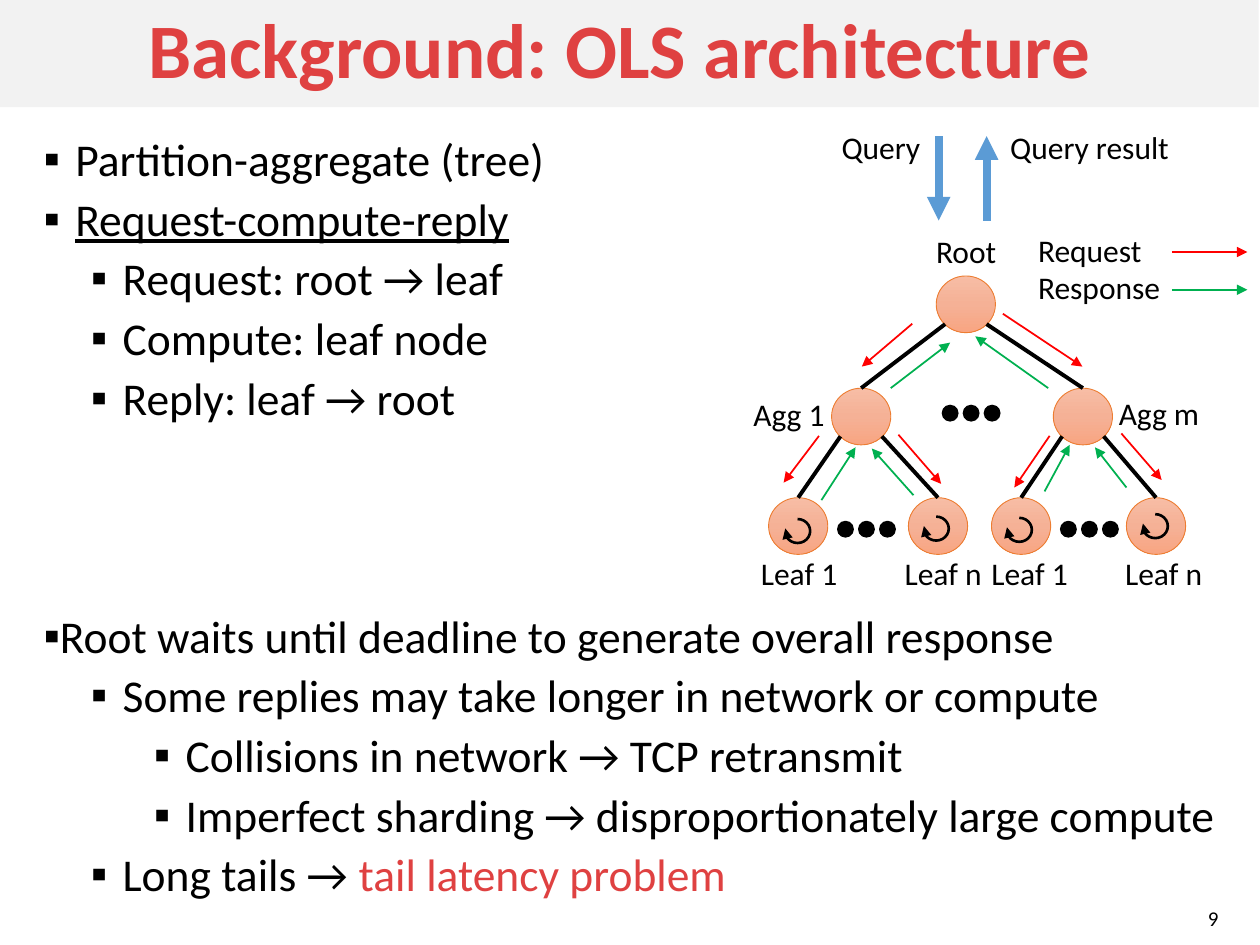
from copy import deepcopy
from lxml.etree import SubElement
from pptx import Presentation
from pptx.dml.color import RGBColor
from pptx.enum.shapes import MSO_CONNECTOR as Connector, MSO_SHAPE as Preset
from pptx.enum.text import MSO_ANCHOR as Anchor, PP_ALIGN as Align
from pptx.oxml.ns import qn
from pptx.util import Pt

paint = RGBColor.from_string
BLACK, CORAL, RED, GREEN, BLUE = "000000", "DF4141", "FF0000", "00B050", "5B9BD5"


def write(para, text, size, color=BLACK):
    span = para.add_run()
    span.text = text
    span.font.name = "Calibri"
    span.font.size = Pt(size)
    span.font.color.rgb = paint(color)
    return span


def draw_line(start, end, color, width, arrow=True):
    line = page.shapes.add_connector(Connector.STRAIGHT, *map(Pt, start + end))
    line.line.color.rgb = paint(color)
    line.line.width = Pt(width)
    properties = line._element.spPr
    SubElement(properties, qn("a:effectLst"))
    if arrow:
        SubElement(properties.find(qn("a:ln")), qn("a:tailEnd"), type="triangle")
    return line


deck = Presentation()
deck.slide_width, deck.slide_height = Pt(720), Pt(540)
page = deck.slides.add_slide(deck.slide_layouts[6])

title = page.shapes.add_shape(Preset.RECTANGLE, Pt(-0.72), Pt(0), Pt(720), Pt(61.2))
title.shadow.inherit = False
title.fill.solid()
title.fill.fore_color.rgb = paint("F2F2F2")
title.line.fill.background()
title.text_frame.word_wrap = True
title.text_frame.vertical_anchor = Anchor.MIDDLE
para = title.text_frame.paragraphs[0]
para.alignment = Align.CENTER
para.line_spacing = 0.9
write(para, "Background: OLS architecture ", 44, CORAL).font.bold = True

bullets = [
    (0, 18, 6, "Partition-aggregate (tree)", ""),
    (0, 18, 6, "Request-compute-reply", ""),
    (1, 45, 6, "Request: root → leaf", ""),
    (1, 45, 6, "Compute: leaf node", ""),
    (1, 45, 6, "Reply: leaf → root", ""),
    (0, 9, 108, "Root waits until deadline to generate overall response", ""),
    (1, 45, 6, "Some replies may take longer in network or compute", ""),
    (2, 81, 6, "Collisions in network → TCP retransmit", ""),
    (2, 81, 6, "Imperfect sharding → disproportionately large compute", ""),
    (1, 45, 6, "Long tails → ", "tail latency problem"),
]
body = page.shapes.add_textbox(Pt(18), Pt(74.88), Pt(695.5), Pt(437.8)).text_frame
body.word_wrap = True
for index, (level, margin, gap, text, accent) in enumerate(bullets):
    para = body.add_paragraph() if index else body.paragraphs[0]
    para.level = level
    para.line_spacing = 0.9
    para.space_before = Pt(gap)
    span = write(para, text, 26)
    span.font.underline = text == "Request-compute-reply"
    if accent:
        write(para, accent, 26, CORAL)
    properties = para._p.get_or_add_pPr()
    properties.set("marL", str(Pt(margin)))
    properties.set("indent", str(Pt(-18)))
    SubElement(properties, qn("a:buFont"), typeface="Calibri")
    SubElement(properties, qn("a:buChar"), char="▪")

node_width, node_height = 33.84, 32.4
node_places = {
    "root": (535, 157.7),
    "agg 1": (475.2, 221.8),
    "agg m": (601.9, 221.8),
    "agg 1 leaf 1": (439.2, 284.4),
    "agg 1 leaf n": (519.1, 284.4),
    "agg m leaf 1": (566.6, 284.4),
    "agg m leaf n": (643.7, 284.4),
}
nodes = {}
for name, (left, top) in node_places.items():
    node = page.shapes.add_shape(Preset.OVAL, Pt(left), Pt(top), Pt(node_width), Pt(node_height))
    node.shadow.inherit = False
    node.fill.gradient()
    stops = node._element.spPr.find(qn("a:gradFill")).find(qn("a:gsLst"))
    stops.append(deepcopy(stops[0]))
    for stop, position, color in zip(node.fill.gradient_stops, (0, 0.5, 1), ("F7BDA5", "F5B196", "F8A582")):
        stop.position = position
        stop.color.rgb = paint(color)
    node.fill.gradient_angle = 270
    node.line.color.rgb = paint("ED7D31")
    node.line.width = Pt(0.5)
    nodes[name] = node

branches = [("root", "agg 1", "agg m"),
            ("agg 1", "agg 1 leaf 1", "agg 1 leaf n"),
            ("agg m", "agg m leaf 1", "agg m leaf n")]
for parent, *children in branches:
    left, top = node_places[parent]
    for child, side in zip(children, (0.15, 0.85)):
        start = (left + side * node_width, top + 0.85 * node_height)
        edge = draw_line(start, node_places[child], BLACK, 2.25, arrow=False)
        edge.end_connect(nodes[child], 0)

requests = [
    ((521.3, 185), (492.5, 209.5)), ((573.1, 179.3), (618.5, 209.5)),
    ((468, 249.1), (447.8, 275.8)), ((513.4, 248.4), (537.8, 276.5)),
    ((599.8, 249.1), (579.6, 278.6)), ((640.8, 247.7), (663.8, 274.3)),
    ((669.6, 144), (712.8, 144)),
]
responses = [
    ((509, 221.8), (542.9, 195.8)), ((599, 221.8), (557.3, 192.2)),
    ((469.4, 285.8), (488.9, 255.6)), ((522, 283), (498.2, 256.3)),
    ((596.9, 280.8), (611.3, 254.2)), ((643.7, 278.6), (625.7, 255.6)),
    ((669.6, 165.6), (712.8, 165.6)),
]
queries = [((536.4, 77.8), (536.4, 126)), ((563.8, 126), (563.8, 77.8))]
for arrows, color, width in ((requests, RED, 1), (responses, GREEN, 1), (queries, BLUE, 4.5)):
    for start, end in arrows:
        draw_line(start, end, color, width)

for left, top in ((538.6, 231.8), (478.8, 298.1), (606.2, 298.1)):
    for step in range(3):
        dot = page.shapes.add_shape(Preset.OVAL, Pt(left + 12 * step), Pt(top), Pt(8.64), Pt(8.64))
        dot.shadow.inherit = False
        dot.fill.solid()
        dot.fill.fore_color.rgb = paint(BLACK)
        dot.line.color.rgb = paint(BLACK)
        dot.line.width = Pt(1)

for left, top in ((448.6, 296.6), (527.8, 295.2), (575.3, 295.9), (653, 293.8)):
    loop = page.shapes.add_shape(Preset.ARC, Pt(left), Pt(top), Pt(14.4), Pt(13.7))
    loop.shadow.inherit = False
    loop.adjustments[0], loop.adjustments[1] = 162, 115
    loop.fill.background()
    loop.line.color.rgb = paint(BLACK)
    loop.line.width = Pt(1.5)
    SubElement(loop._element.spPr.find(qn("a:ln")), qn("a:tailEnd"), type="triangle")

labels = [
    (427.7, 313.2, 59, ["Leaf 1"]), (509.8, 313.2, 59, ["Leaf n"]),
    (559.4, 313.2, 59, ["Leaf 1"]), (635.8, 313.2, 59, ["Leaf n"]),
    (423.4, 222.1, 56, ["Agg 1"]), (632.2, 221.8, 61.2, ["Agg m"]),
    (527.8, 128.9, 50, ["Root"]), (586.1, 128.2, 86.4, ["Request", "Response"]),
    (473.8, 69.8, 64.8, ["Query"]), (570.2, 69.8, 119.5, ["Query result"]),
]
for left, top, width, lines in labels:
    height = 6.8 + 22 * len(lines)
    label = page.shapes.add_textbox(Pt(left), Pt(top), Pt(width), Pt(height)).text_frame
    label.word_wrap = True
    for index, text in enumerate(lines):
        para = label.add_paragraph() if index else label.paragraphs[0]
        write(para, text, 18)

number = page.shapes.add_textbox(Pt(645.8), Pt(514.1), Pt(57.6), Pt(21.6)).text_frame
number.word_wrap = True
number.vertical_anchor = Anchor.MIDDLE
number.paragraphs[0].alignment = Align.RIGHT
write(number.paragraphs[0], "9", 12)

deck.save("out.pptx")
